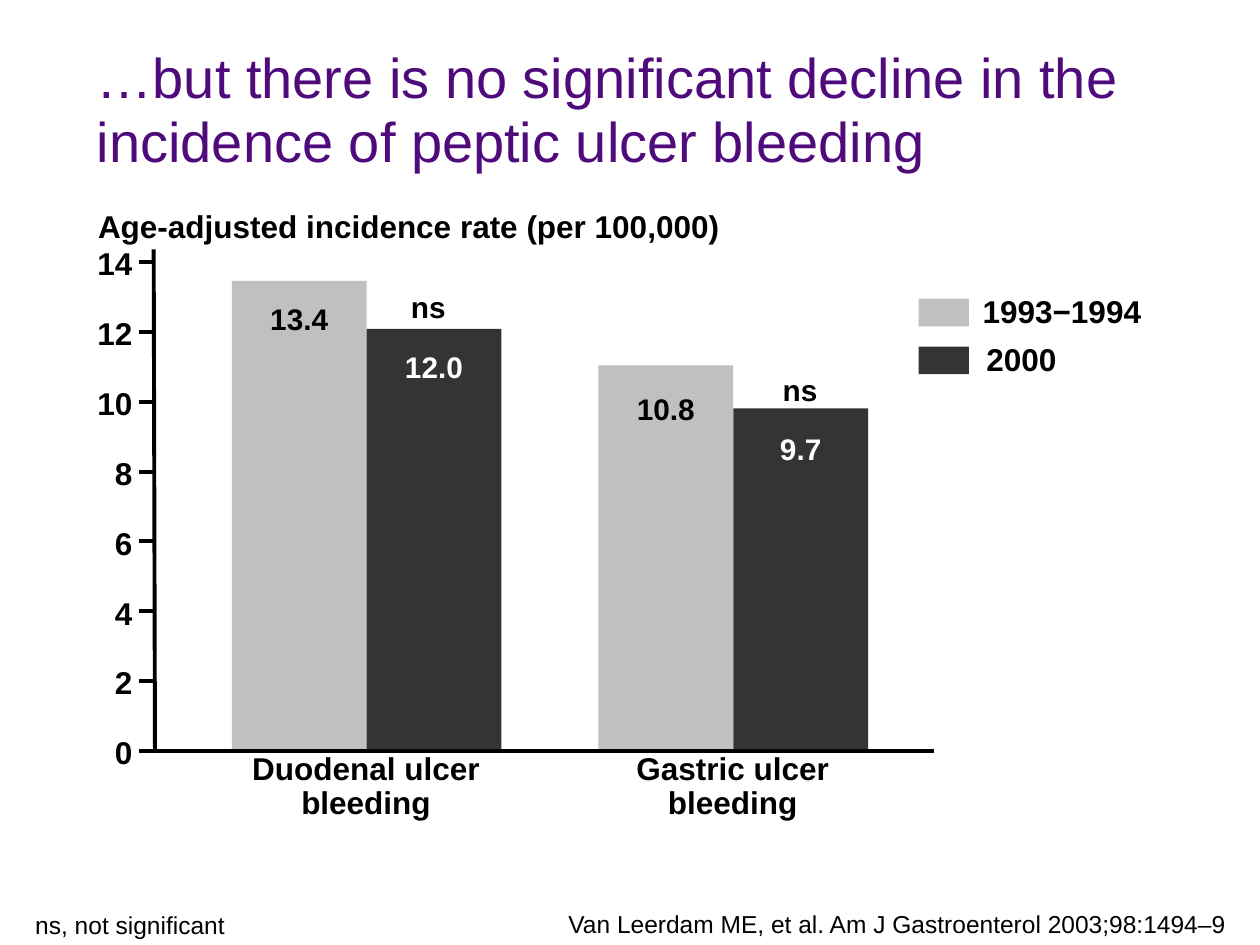
from pptx import Presentation
from pptx.dml.color import RGBColor
from pptx.enum.shapes import MSO_CONNECTOR as CONN, MSO_SHAPE as SHAPE
from pptx.enum.text import MSO_ANCHOR as ANCHOR, PP_ALIGN as ALIGN
from pptx.oxml.ns import qn
from pptx.util import Inches, Pt
from lxml import etree

BLACK, WHITE, PURPLE = "000000", "FFFFFF", "4F0B7B"
LIGHT, DARK = "C0C0C0", "343434"
BOLD = {"size": Pt(18), "bold": True}
VALUE = {"size": Pt(17), "bold": True}
NOTE = {"size": Pt(14), "bold": False}

SERIES = [("1993−1994", LIGHT, BLACK), ("2000", DARK, WHITE)]
# Per bar: value, bar height, gap from bar top to its label
GROUPS = [
    ("Duodenal ulcer bleeding", 0.61, [("13.4", 3.73, 0.11), ("12.0", 3.35, 0.11)],
     (2.17, 0.32)),
    ("Gastric ulcer bleeding", 3.52, [("10.8", 3.06, 0.15), ("9.7", 2.72, 0.13)],
     (5.12, 0.29)),
]


def rgb(value):
    return RGBColor.from_string(value)


def add_text(s, text, x, y, w, h, font, color=BLACK, align=ALIGN.LEFT,
             inset=True, spacing=None, anchor=ANCHOR.TOP):
    tf = s.shapes.add_textbox(Inches(x), Inches(y), Inches(w), Inches(h)).text_frame
    frame = {"word_wrap": True, "vertical_anchor": anchor}
    if not inset:
        frame.update(dict.fromkeys(
            ("margin_left", "margin_right", "margin_top", "margin_bottom"), 0))
    for name, value in frame.items():
        setattr(tf, name, value)
    p = tf.paragraphs[0]
    p.text = text
    p.alignment = align
    if spacing:
        p.line_spacing = spacing
    for name, value in {"name": "Arial", **font}.items():
        setattr(p.font, name, value)
    p.font.color.rgb = rgb(color)


def add_box(s, x, y, w, h, color):
    sp = s.shapes.add_shape(SHAPE.RECTANGLE, Inches(x), Inches(y), Inches(w), Inches(h))
    sp.shadow.inherit = False
    sp.fill.solid()
    sp.fill.fore_color.rgb = rgb(color)
    sp.line.fill.background()


def add_line(s, x1, y1, x2, y2):
    line = s.shapes.add_connector(CONN.STRAIGHT, *map(Inches, (x1, y1, x2, y2)))
    line.line.color.rgb = rgb(BLACK)
    line.line.width = Pt(2.25)
    etree.SubElement(line._element.spPr, qn("a:effectLst"))


def add_header(s, x, y):
    add_text(s, "…but there is no significant decline in the\v"
             "incidence of peptic ulcer bleeding", x, y, 9.33, 1.25,
             {"size": Pt(32)}, PURPLE, spacing=0.95)
    add_text(s, "Age-adjusted incidence rate (per 100,000)",
             x + 0.01, y + 1.26, 5.13, 0.4, BOLD)


def add_axes(s, x, base):
    """Draw both axes from the origin (x, base), with ticks and tick labels."""
    add_line(s, x, base, x + 6.18, base)
    add_line(s, x, base, x - 0.01, base - 3.98)
    step = 3.88 / 7
    for i in range(8):
        y = base - i * step
        add_line(s, x - 0.13, y, x, y)
        add_text(s, str(2 * i), x - 0.64, y - 0.14, 0.46, 0.3, BOLD,
                 align=ALIGN.RIGHT, inset=False)


def add_bars(s, x, base):
    bar_w = 1.07
    for category, left, bars, (ns_center, ns_rise) in GROUPS:
        for i, (value, height, gap) in enumerate(bars):
            _, fill, color = SERIES[i]
            bar_x, top = x + left + i * bar_w, base - height
            add_box(s, bar_x, top, bar_w, height, fill)
            add_text(s, value, bar_x + 0.1, top + gap, bar_w - 0.2, 0.38,
                     VALUE, color, ALIGN.CENTER)
        # The significance mark stands over the last bar of the group
        add_text(s, "ns", x + ns_center - 0.18, top - ns_rise, 0.36, 0.28, VALUE,
                 align=ALIGN.CENTER, inset=False)
        add_text(s, category, x + left + 0.04, base + 0.02, 2.05, 0.54, BOLD,
                 align=ALIGN.CENTER, inset=False, spacing=0.9)


def add_legend(s, x, y):
    for i, (label, fill, _) in enumerate(SERIES):
        row = y + 0.38 * i
        add_box(s, x, row, 0.4, 0.22, fill)
        add_text(s, label, x + 0.41 + 0.03 * i, row - 0.1, 1.77, 0.4, BOLD)


def add_footer(s, x, y):
    add_text(s, "ns, not significant", x, y + 0.03, 2.04, 0.23, NOTE, inset=False)
    add_text(s, "Van Leerdam ME, et al. Am J Gastroenterol 2003;98:1494–9",
             x + 0.06, y, 9.49, 0.31, NOTE, align=ALIGN.RIGHT, spacing=0.9,
             anchor=ANCHOR.BOTTOM)


def main():
    prs = Presentation()
    prs.slide_width, prs.slide_height = Inches(10), Inches(7.5)
    s = prs.slides.add_slide(prs.slide_layouts[6])
    add_header(s, 0.67, 0.33)
    add_bars(s, 1.23, 5.96)
    add_axes(s, 1.23, 5.96)
    add_legend(s, 7.29, 2.37)
    add_footer(s, 0.28, 7.19)
    prs.save("out.pptx")


if __name__ == "__main__":
    main()
